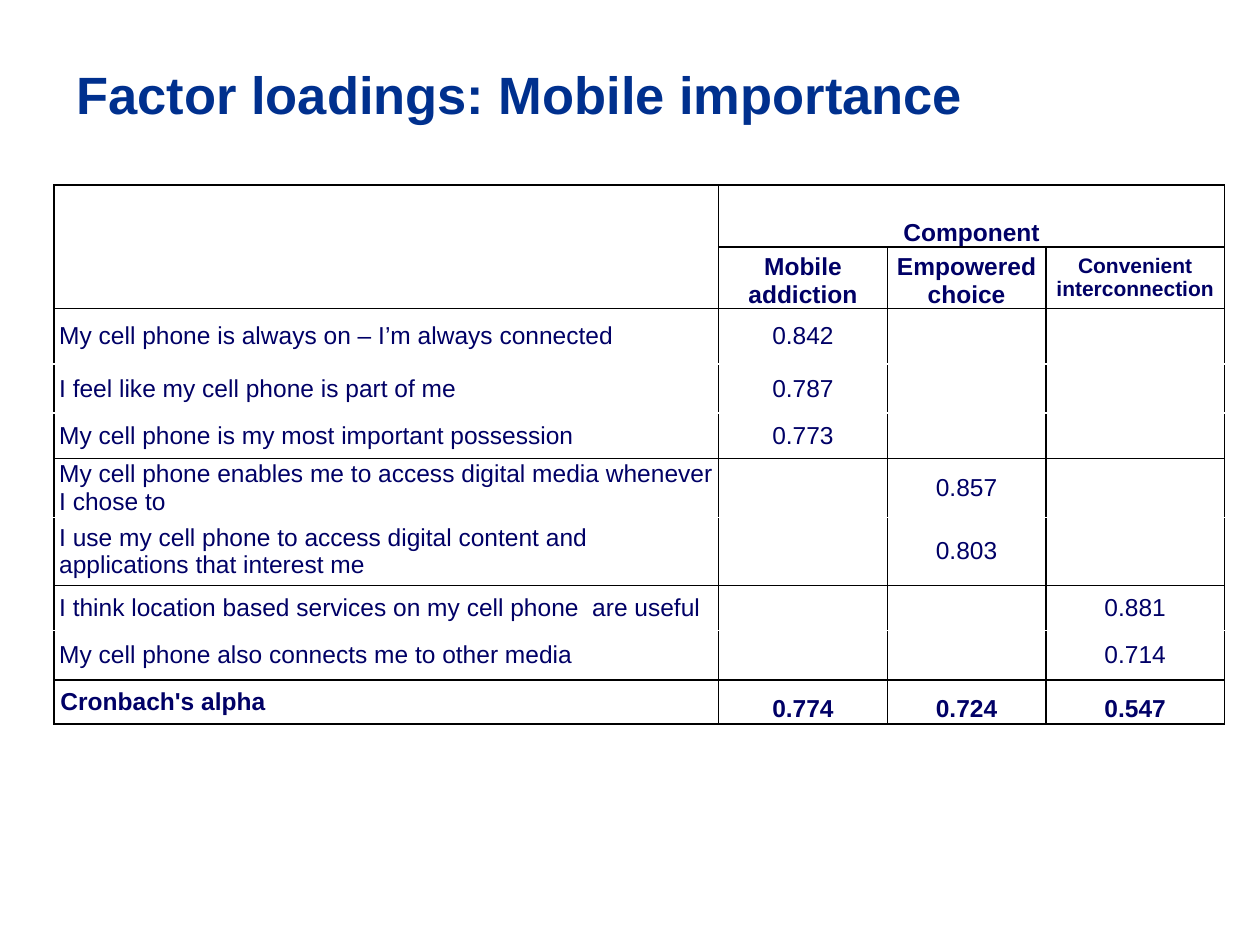
from lxml.etree import SubElement
from pptx import Presentation
from pptx.dml.color import RGBColor
from pptx.enum.text import MSO_ANCHOR, PP_ALIGN
from pptx.oxml.ns import qn
from pptx.util import Inches, Pt

BLACK = RGBColor(0, 0, 0)
WHITE = RGBColor(0xFF, 0xFF, 0xFF)
NAVY = RGBColor(0, 0, 0x66)
BLUE = RGBColor(0, 0x30, 0x8E)

COLUMN_WIDTHS = [5.28, 1.34, 1.26, 1.42]
ROW_HEIGHTS = [0.49, 0.49, 0.44, 0.39, 0.36, 0.44, 0.54, 0.36, 0.39, 0.34]
GROUP_STARTS = {0, 1, 2, 5, 7, 9}
ROWS = [
    ["", "Component", "", ""],
    ["", "Mobile addiction", "Empowered choice", "Convenient interconnection"],
    ["My cell phone is always on – I’m always connected", "0.842", "", ""],
    ["I feel like my cell phone is part of me", "0.787", "", ""],
    ["My cell phone is my most important possession", "0.773", "", ""],
    ["My cell phone enables me to access digital media whenever I chose to", "", "0.857", ""],
    ["I use my cell phone to access digital content and applications that interest me", "", "0.803", ""],
    ["I think location based services on my cell phone  are useful", "", "", "0.881"],
    ["My cell phone also connects me to other media", "", "", "0.714"],
    ["Cronbach's alpha", "0.774", "0.724", "0.547"],
]
HEADER_ROWS = 2
ALPHA_ROW = len(ROWS) - 1


def set_attributes(target, values):
    for name, value in values.items():
        setattr(target, name, value)


def write_text(paragraph, text, size, color, bold):
    run = paragraph.add_run()
    run.text = text
    set_attributes(run.font, {"name": "Arial", "size": Pt(size), "bold": bold})
    run.font.color.rgb = color


def add_title(slide, left, top, width, height):
    shape = slide.shapes.add_textbox(left, top, width, height)
    frame = shape.text_frame
    set_attributes(frame, {"word_wrap": True, "vertical_anchor": MSO_ANCHOR.MIDDLE})
    write_text(frame.paragraphs[0], "Factor loadings: Mobile importance", 30, BLUE, True)


def draw_borders(cell, sides):
    properties = cell._tc.get_or_add_tcPr()
    for side in sides:
        line = SubElement(properties, qn(f"a:ln{side}"), w=str(Pt(1)))
        fill = SubElement(line, qn("a:solidFill"))
        SubElement(fill, qn("a:srgbClr"), val=str(BLACK))


def format_cell(cell, row, column):
    sides = ["L", "R"]
    if row in GROUP_STARTS:
        sides.append("T")
    if row == ALPHA_ROW or row + 1 in GROUP_STARTS:
        sides.append("B")
    draw_borders(cell, sides)
    cell.fill.solid()
    cell.fill.fore_color.rgb = WHITE

    small = row == 1 and column == 3
    bottom = row < HEADER_ROWS and not small
    side_margin = Inches(0.05 if row == ALPHA_ROW else 0.04)
    set_attributes(cell, {
        "margin_left": side_margin,
        "margin_right": side_margin,
        "margin_top": 0,
        "margin_bottom": 0,
        "vertical_anchor": MSO_ANCHOR.BOTTOM if bottom else MSO_ANCHOR.MIDDLE,
    })
    text = ROWS[row][column]
    if text:
        paragraph = cell.text_frame.paragraphs[0]
        paragraph.alignment = PP_ALIGN.CENTER if column else PP_ALIGN.LEFT
        if column and row in (0, ALPHA_ROW):
            paragraph.line_spacing = 1.5
        bold = row < HEADER_ROWS or row == ALPHA_ROW
        write_text(paragraph, text, 12 if small else 14, NAVY, bold)


def add_loadings_table(slide, left, top, width, height):
    shape = slide.shapes.add_table(len(ROWS), len(COLUMN_WIDTHS), left, top, width, height)
    table = shape.table
    set_attributes(table, {"first_row": False, "horz_banding": False})
    for column, share in zip(table.columns, COLUMN_WIDTHS):
        column.width = int(width * share / sum(COLUMN_WIDTHS))
    for row, share in zip(table.rows, ROW_HEIGHTS):
        row.height = int(height * share / sum(ROW_HEIGHTS))
    table.cell(0, 0).merge(table.cell(1, 0))
    table.cell(0, 1).merge(table.cell(0, 3))
    for row in range(len(ROWS)):
        for column in range(len(COLUMN_WIDTHS)):
            format_cell(table.cell(row, column), row, column)


def main():
    presentation = Presentation()
    set_attributes(presentation, {"slide_width": Inches(10), "slide_height": Inches(7.5)})
    slide = presentation.slides.add_slide(presentation.slide_layouts[6])
    add_title(slide, Inches(0.51), Inches(0.25), Inches(9.13), Inches(0.98))
    add_loadings_table(slide, Inches(0.43), Inches(1.47), Inches(9.29), Inches(4.24))
    presentation.save("out.pptx")


if __name__ == "__main__":
    main()
